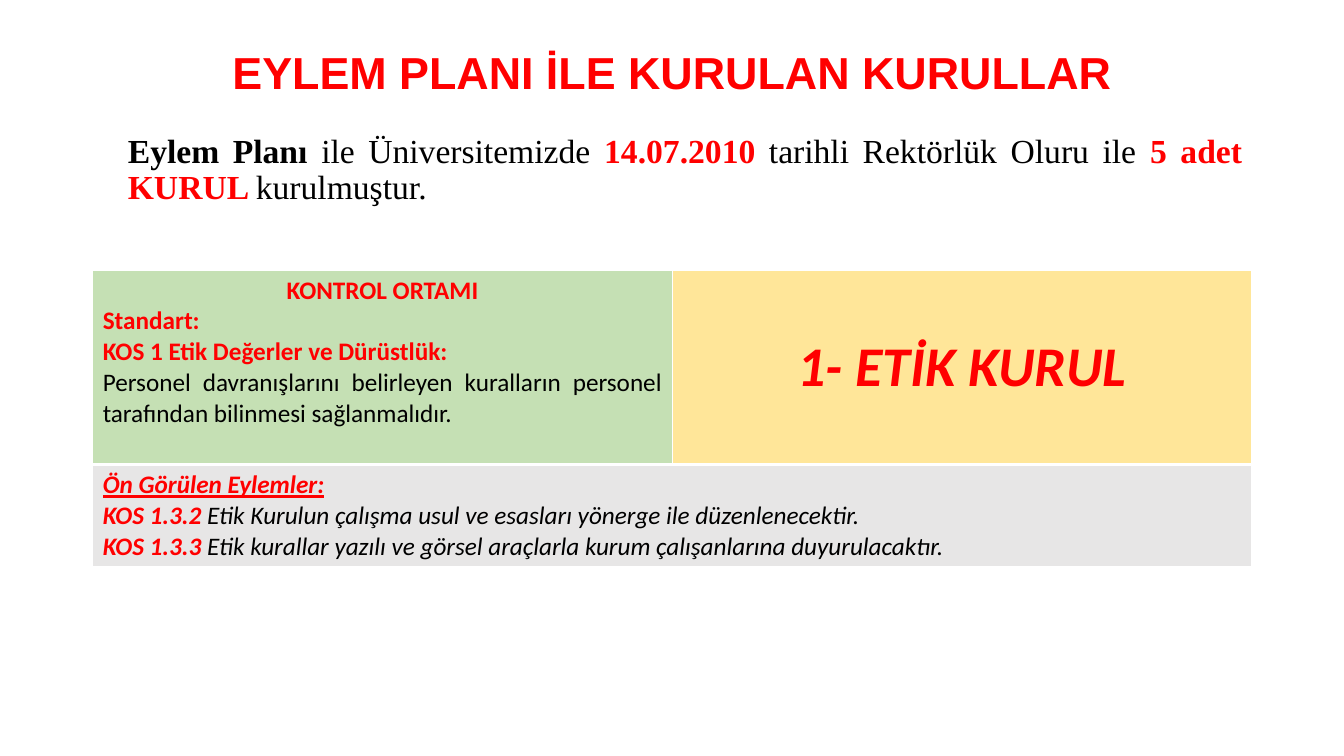
from dataclasses import dataclass

from lxml.etree import SubElement
from pptx import Presentation
from pptx.dml.color import RGBColor
from pptx.enum.text import MSO_ANCHOR, PP_ALIGN
from pptx.oxml.ns import qn
from pptx.util import Inches, Length, Pt

COLORS = {
    "red": "FF0000",
    "black": "000000",
    "white": "FFFFFF",
    "green": "C5E0B4",
    "yellow": "FFE699",
    "grey": "E7E6E6",
}
WIDTH, HEIGHT = Inches(13.33), Inches(7.5)
GRID = 100
LEFT, SPAN = 6.9, 86.25
BORDER_SIDES = ("L", "R", "T", "B")


@dataclass(frozen=True)
class Span:
    text: str
    color: str = "red"
    bold: bool = True
    italic: bool = False
    underline: bool = False


@dataclass(frozen=True)
class Para:
    spans: tuple[Span, ...]
    align: PP_ALIGN = PP_ALIGN.LEFT
    spacing: float = 1.0
    before: float = 0
    indent: float = 0


@dataclass(frozen=True)
class Block:
    paras: tuple[Para, ...]
    font: str
    size: float
    anchor: MSO_ANCHOR = MSO_ANCHOR.TOP


@dataclass(frozen=True)
class TextBox:
    top: float
    height: float
    block: Block


@dataclass(frozen=True)
class TableCell:
    row: int
    column: int
    fill: str
    block: Block
    bottom: float = 1


def action(code: str, text: str) -> Para:
    """Return one planned action with its red code."""
    return Para((Span(code, italic=True), Span(text, "black", False, True)))


TEXT_BOXES = (
    TextBox(5.33, 9.07, Block(
        (Para((Span("EYLEM PLANI İLE KURULAN KURULLAR"),), PP_ALIGN.CENTER, 0.9),),
        "Arial", 32, MSO_ANCHOR.MIDDLE)),
    TextBox(17.07, 11.07, Block(
        (Para((
            Span("Eylem Planı ", "black"),
            Span("ile Üniversitemizde ", "black", False),
            Span("14.07.2010"),
            Span(" tarihli Rektörlük Oluru ile ", "black", False),
            Span("5 adet KURUL "),
            Span("kurulmuştur.", "black", False),
        ), PP_ALIGN.JUSTIFY, 0.9, 10, 0.25),),
        "Times New Roman", 24)),
)

TABLE_TOP = 35.73
TABLE_ROWS = (25.73, 13.53)
TABLE_COLUMNS = 2
TABLE_CELLS = (
    TableCell(0, 0, "green", Block((
        Para((Span("KONTROL ORTAMI"),), PP_ALIGN.CENTER),
        Para((Span("Standart:"),)),
        Para((Span("KOS 1 Etik Değerler ve Dürüstlük:"),)),
        Para((Span("Personel davranışlarını belirleyen kuralların personel "
                   "tarafından bilinmesi sağlanmalıdır.", "black", False),),
             PP_ALIGN.JUSTIFY),
    ), "Calibri", 18), 3),
    TableCell(0, 1, "yellow", Block(
        (Para((Span("1- ETİK KURUL", italic=True),), PP_ALIGN.CENTER),),
        "Calibri", 40, MSO_ANCHOR.MIDDLE), 3),
    TableCell(1, 0, "grey", Block((
        Para((Span("Ön Görülen Eylemler:", italic=True, underline=True),)),
        action("KOS 1.3.2 ",
               "Etik Kurulun çalışma usul ve esasları yönerge ile düzenlenecektir."),
        action("KOS 1.3.3 ",
               "Etik kurallar yazılı ve görsel araçlarla kurum çalışanlarına duyurulacaktır."),
    ), "Calibri", 18)),
)


def across(columns: float) -> Length:
    """Return the width of a number of grid columns."""
    return Length(round(WIDTH * columns / GRID))


def down(rows: float) -> Length:
    """Return the height of a number of grid rows."""
    return Length(round(HEIGHT * rows / GRID))


def write_block(frame, block: Block) -> None:
    """Write the paragraphs of a block run by run."""
    frame.word_wrap = True
    for index, item in enumerate(block.paras):
        para = frame.add_paragraph() if index else frame.paragraphs[0]
        para.alignment = item.align
        para.line_spacing = item.spacing
        para.space_before = Pt(item.before)
        if item.indent:
            properties = para._p.get_or_add_pPr()
            properties.set("marL", str(Inches(item.indent)))
            properties.set("indent", "0")
        for span in item.spans:
            run = para.add_run()
            run.text = span.text
            font = run.font
            font.name, font.size = block.font, Pt(block.size)
            font.bold, font.italic = span.bold, span.italic
            font.underline = span.underline
            font.color.rgb = RGBColor.from_string(COLORS[span.color])


def draw_text_box(page, item: TextBox) -> None:
    """Draw a text box across the content width."""
    box = page.shapes.add_textbox(
        across(LEFT), down(item.top), across(SPAN), down(item.height))
    box.text_frame.vertical_anchor = item.block.anchor
    write_block(box.text_frame, item.block)


def draw_borders(cell, bottom: float) -> None:
    """Give a cell white borders."""
    properties = cell._tc.get_or_add_tcPr()
    for side in BORDER_SIDES:
        width = Pt(bottom if side == "B" else 1)
        line = SubElement(properties, qn(f"a:ln{side}"), w=str(width))
        fill = SubElement(line, qn("a:solidFill"))
        SubElement(fill, qn("a:srgbClr"), val=COLORS["white"])


def draw_table(page) -> None:
    """Draw the table of the standard, its board and its actions."""
    table = page.shapes.add_table(
        len(TABLE_ROWS), TABLE_COLUMNS, across(LEFT), down(TABLE_TOP),
        across(SPAN), down(sum(TABLE_ROWS))).table
    table.first_row = table.horz_banding = False
    for row, height in zip(table.rows, TABLE_ROWS):
        row.height = down(height)
    table.cell(1, 0).merge(table.cell(1, TABLE_COLUMNS - 1))
    for item in TABLE_CELLS:
        cell = table.cell(item.row, item.column)
        draw_borders(cell, item.bottom)
        cell.fill.solid()
        cell.fill.fore_color.rgb = RGBColor.from_string(COLORS[item.fill])
        cell.vertical_anchor = item.block.anchor
        write_block(cell.text_frame, item.block)


def main() -> None:
    """Build the slide and save the deck."""
    deck = Presentation()
    deck.slide_width, deck.slide_height = WIDTH, HEIGHT
    page = deck.slides.add_slide(deck.slide_layouts[6])
    title, introduction = TEXT_BOXES
    draw_text_box(page, title)
    draw_table(page)
    draw_text_box(page, introduction)
    deck.save("out.pptx")


if __name__ == "__main__":
    main()
